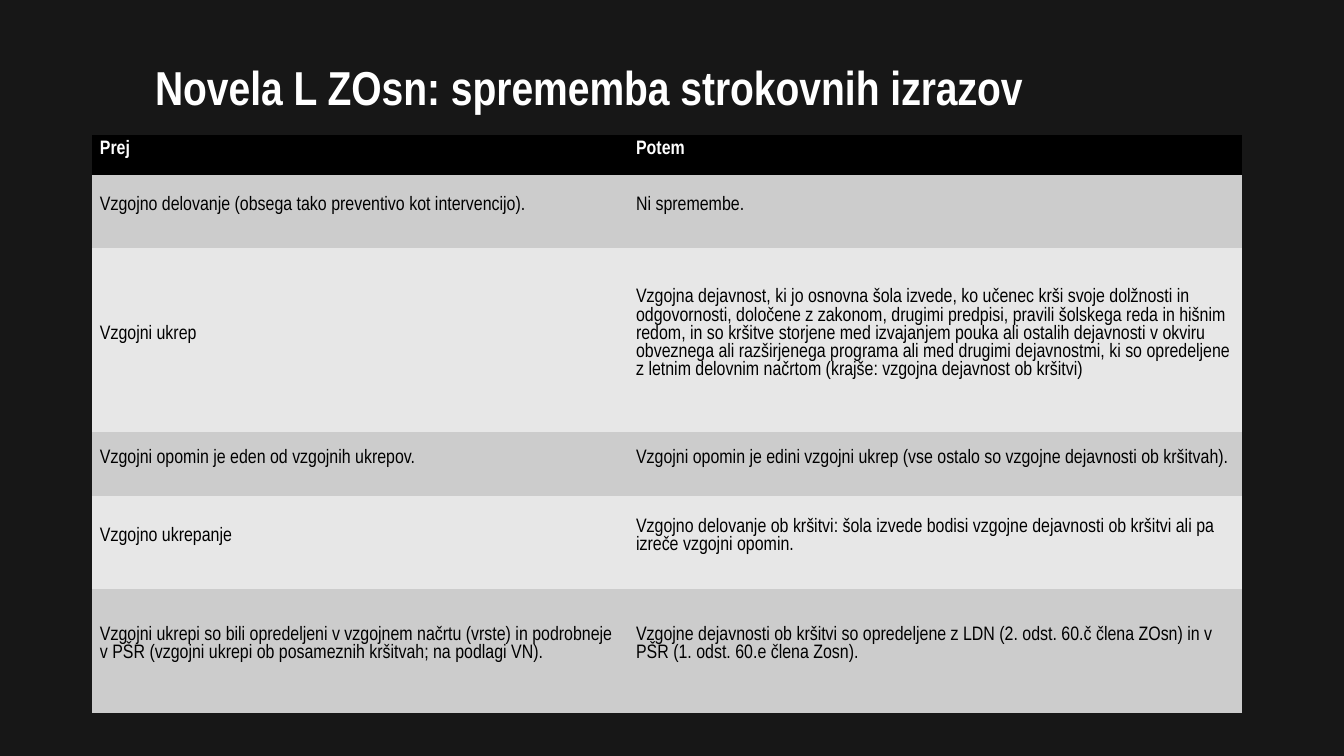
from dataclasses import dataclass

from pptx import Presentation
from pptx.dml.color import RGBColor
from pptx.enum.text import MSO_ANCHOR
from pptx.util import Pt


@dataclass(frozen=True)
class Theme:
    font: str = "Arial Narrow"
    background: RGBColor = RGBColor(0x17, 0x17, 0x17)
    light_text: RGBColor = RGBColor(0xFF, 0xFF, 0xFF)
    dark_text: RGBColor = RGBColor(0, 0, 0)
    header: RGBColor = RGBColor(0, 0, 0)
    bands: tuple = (RGBColor(0xE7, 0xE7, 0xE7), RGBColor(0xCC, 0xCC, 0xCC))
    title_size: float = 34
    table_size: float = 24
    table_leading: float = 13


theme = Theme()
NO_STYLE_NO_GRID = "{2D5ABB26-0587-4C30-8999-92F81FD0307C}"

COLUMN_WIDTHS = (383, 438.3)
ROW_HEIGHTS = (28.8, 51.8, 131.8, 45.4, 66.2, 88.6)
ROWS = (
    ("Prej", "Potem"),
    ("Vzgojno delovanje (obsega tako preventivo kot intervencijo).",
     "Ni spremembe."),
    ("Vzgojni ukrep",
     "Vzgojna dejavnost, ki jo osnovna šola izvede, ko učenec krši svoje "
     "dolžnosti in odgovornosti, določene z zakonom, drugimi predpisi, "
     "pravili šolskega reda in hišnim redom, in so kršitve storjene med "
     "izvajanjem pouka ali ostalih dejavnosti v okviru obveznega ali "
     "razširjenega programa ali med drugimi dejavnostmi, ki so opredeljene "
     "z letnim delovnim načrtom (krajše: vzgojna dejavnost ob kršitvi)"),
    ("Vzgojni opomin je eden od vzgojnih ukrepov.",
     "Vzgojni opomin je edini vzgojni ukrep (vse ostalo so vzgojne "
     "dejavnosti ob kršitvah)."),
    ("Vzgojno ukrepanje",
     "Vzgojno delovanje ob kršitvi: šola izvede bodisi vzgojne dejavnosti "
     "ob kršitvi ali pa izreče vzgojni opomin."),
    ("Vzgojni ukrepi so bili opredeljeni v vzgojnem načrtu (vrste) in "
     "podrobneje v PŠR (vzgojni ukrepi ob posameznih kršitvah; na podlagi VN).",
     "Vzgojne dejavnosti ob kršitvi so opredeljene z LDN (2. odst. 60.č člena "
     "ZOsn) in v PŠR (1. odst. 60.e člena Zosn)."),
)


def write(p, text, size, color, bold, spacing):
    r = p.add_run()
    r.text = text
    p.line_spacing = spacing
    p.font.name = theme.font
    p.font.size = Pt(size)
    p.font.bold = bold
    p.font.color.rgb = color
    return r


prs = Presentation()
prs.slide_width, prs.slide_height = Pt(960), Pt(540)
s = prs.slides.add_slide(prs.slide_layouts[6])
s.background.fill.solid()
s.background.fill.fore_color.rgb = theme.background

# Title
tf = s.shapes.add_textbox(Pt(103.7), Pt(12.2), Pt(790.6), Pt(104.4)).text_frame
tf.word_wrap = True
tf.vertical_anchor = MSO_ANCHOR.MIDDLE
write(tf.paragraphs[0], "Novela L ZOsn: sprememba strokovnih izrazov",
      theme.title_size, theme.light_text, True, 0.9)

# Comparison table
frame = s.shapes.add_table(len(ROWS), len(COLUMN_WIDTHS), Pt(66), Pt(96.5),
                           Pt(sum(COLUMN_WIDTHS)), Pt(sum(ROW_HEIGHTS)))
table = frame.table
table._tbl.tblPr.find("{*}tableStyleId").text = NO_STYLE_NO_GRID
for column, width in zip(table.columns, COLUMN_WIDTHS):
    column.width = Pt(width)

for i, (texts, height) in enumerate(zip(ROWS, ROW_HEIGHTS)):
    table.rows[i].height = Pt(height)
    is_header = i == 0
    for j, text in enumerate(texts):
        cell = table.cell(i, j)
        cell.fill.solid()
        cell.fill.fore_color.rgb = theme.header if is_header else theme.bands[i % 2]
        cell.vertical_anchor = MSO_ANCHOR.MIDDLE
        cell.margin_left = cell.margin_right = Pt(5.4)
        cell.margin_top, cell.margin_bottom = Pt(5.6), Pt(0)
        r = write(cell.text_frame.paragraphs[0], text, theme.table_size,
                  theme.light_text if is_header else theme.dark_text,
                  is_header, Pt(theme.table_leading))
        r.font._element.set("baseline", "20000")

prs.save("out.pptx")
